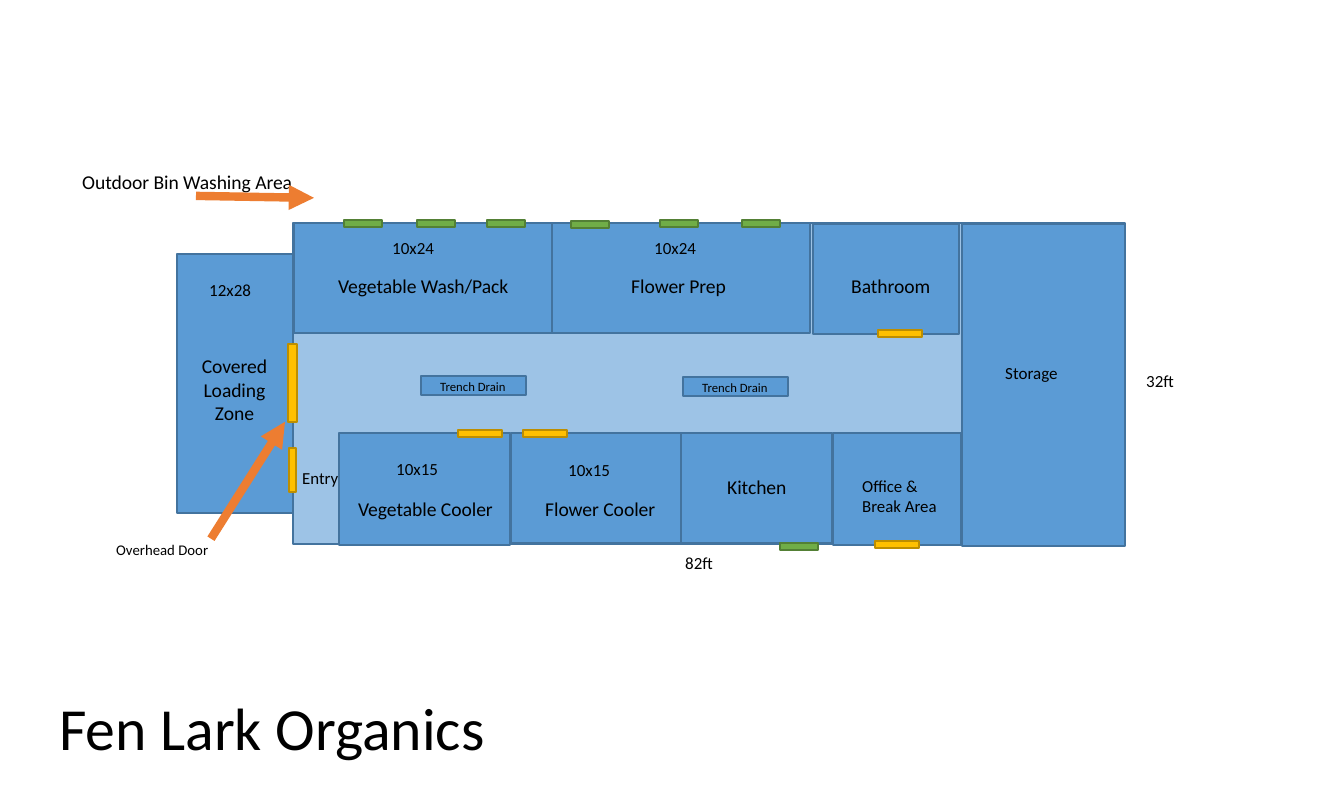
from lxml import etree
from pptx import Presentation
from pptx.dml.color import RGBColor
from pptx.enum.shapes import MSO_CONNECTOR as CONN, MSO_SHAPE as SHAPE
from pptx.enum.text import MSO_AUTO_SIZE as FIT, PP_ALIGN as ALIGN
from pptx.oxml.ns import qn
from pptx.util import Inches, Pt

COLORS = {
    "hall": "9DC3E6", "room": "5B9BD5", "wall": "43739E",
    "door": "FFC000", "door_edge": "BD8E00",
    "window": "70AD47", "window_edge": "538035",
    "arrow": "ED7D31", "text": "000000",
}

# Floor plan, in px: left, top, width, height
HALL = (293, 223, 832, 321)
ROOMS = [
    (813, 224, 146, 110),  # bathroom
    (339, 433, 171, 112),  # vegetable cooler
    (833, 433, 128, 112),  # office
    (511, 433, 171, 110),  # flower cooler
    (962, 224, 163, 322),  # storage
    (177, 254, 116, 259),  # loading zone
    (294, 223, 258, 110),  # vegetable wash
    (552, 223, 258, 110),  # flower prep
    (681, 433, 151, 110),  # kitchen
]
DRAINS = [(421, 376), (683, 377)]
DRAIN_SIZE = (105, 19)
OVERHEAD_DOOR = (288, 344, 9, 78)
ENTRY_DOOR = (289, 448, 7, 44)
DOORS = [(458, 430), (523, 430), (878, 330), (875, 541)]
DOOR_SIZE = (44, 7)
WINDOWS = [(344, 220), (417, 220), (487, 220), (571, 221), (660, 220),
           (742, 220), (780, 543)]
WINDOW_SIZE = (38, 7)

# Arrows, in px: start, end
ARROWS = [((196, 196), (314, 198)), ((211, 539), (285, 422))]

# Labels: lines, left, top, width in px, size in points
LABELS = [
    (["82ft"], 672, 546, 55, 9.1),
    (["32ft"], 1133, 364, 55, 9.1),
    (["10x15"], 383, 452, 70, 9.1),
    (["10x15"], 555, 453, 70, 9.1),
    (["Vegetable Cooler"], 345, 491, 165, 10.5),
    (["Flower Cooler"], 532, 491, 138, 10.5),
    (["Bathroom"], 838, 268, 108, 10.5),
    (["Vegetable Wash/Pack"], 325, 268, 203, 10.5),
    (["Flower Prep"], 618, 268, 124, 10.5),
    (["10x24"], 379, 231, 70, 9.1),
    (["10x24"], 641, 231, 70, 9.1),
    (["Storage"], 992, 356, 81, 9.1),
    (["12x28"], 196, 273, 70, 9.1),
    (["Trench Drain"], 427, 372, 93, 6.8),
    (["Trench Drain"], 689, 373, 93, 6.8),
    (["Overhead Door"], 103, 534, 120, 7.9),
    (["Outdoor Bin Washing Area"], 69, 163, 242, 10.5),
    (["Entry"], 289, 461, 63, 9),
    (["Office &", "Break Area"], 849, 469, 102, 9),
    (["Kitchen"], 714, 469, 87, 10.5),
    (["Fen Lark Organics"], 46, 685, 480, 32),
]
LOADING_LABEL = (["Covered Loading Zone"], 185, 348, 99, 10.5)

SCALE = Inches(10) / 1344  # EMU in one px


def px(*lengths):
    return [round(n * SCALE) for n in lengths]


def color(name):
    return RGBColor.from_string(COLORS[name])


def add_block(s, box, fill, edge):
    sp = s.shapes.add_shape(SHAPE.RECTANGLE, *px(*box))
    sp.shadow.inherit = False
    sp.fill.solid()
    sp.fill.fore_color.rgb = color(fill)
    sp.line.color.rgb = color(edge)
    sp.line.width = Pt(1)


def add_label(s, lines, left, top, width, size, rows=None, wrap=False):
    # Line height is 1.22 of the font size; margins add 0.1 inch
    inches = (rows or len(lines)) * size * 1.22 / 72 + 0.1
    sp = s.shapes.add_textbox(*px(left, top, width), Inches(inches))
    tf = sp.text_frame
    tf.word_wrap = wrap
    tf.auto_size = FIT.SHAPE_TO_FIT_TEXT
    tf.text = "\n".join(lines)
    for p in tf.paragraphs:
        p.font.name = "Calibri"
        p.font.size = Pt(size)
        p.font.color.rgb = color("text")
        if wrap:
            p.alignment = ALIGN.CENTER


def add_arrow(s, start, end):
    cx = s.shapes.add_connector(CONN.STRAIGHT, *px(*start, *end))
    cx.line.color.rgb = color("arrow")
    cx.line.width = Pt(4.5)
    etree.SubElement(cx.line._get_or_add_ln(), qn("a:tailEnd"), type="triangle")
    etree.SubElement(cx._element.spPr, qn("a:effectLst"))


def main():
    prs = Presentation()
    prs.slide_width, prs.slide_height = Inches(10), Inches(6)
    s = prs.slides.add_slide(prs.slide_layouts[6])

    # Hall, rooms and drains
    add_block(s, HALL, "hall", "wall")
    for box in ROOMS + [d + DRAIN_SIZE for d in DRAINS]:
        add_block(s, box, "room", "wall")

    # Doors and windows
    for box in [OVERHEAD_DOOR, ENTRY_DOOR] + [d + DOOR_SIZE for d in DOORS]:
        add_block(s, box, "door", "door_edge")
    for corner in WINDOWS:
        add_block(s, corner + WINDOW_SIZE, "window", "window_edge")

    # Labels and arrows
    for label in LABELS:
        add_label(s, *label)
    add_label(s, *LOADING_LABEL, rows=3, wrap=True)
    for start, end in ARROWS:
        add_arrow(s, start, end)

    prs.save("out.pptx")


if __name__ == "__main__":
    main()
